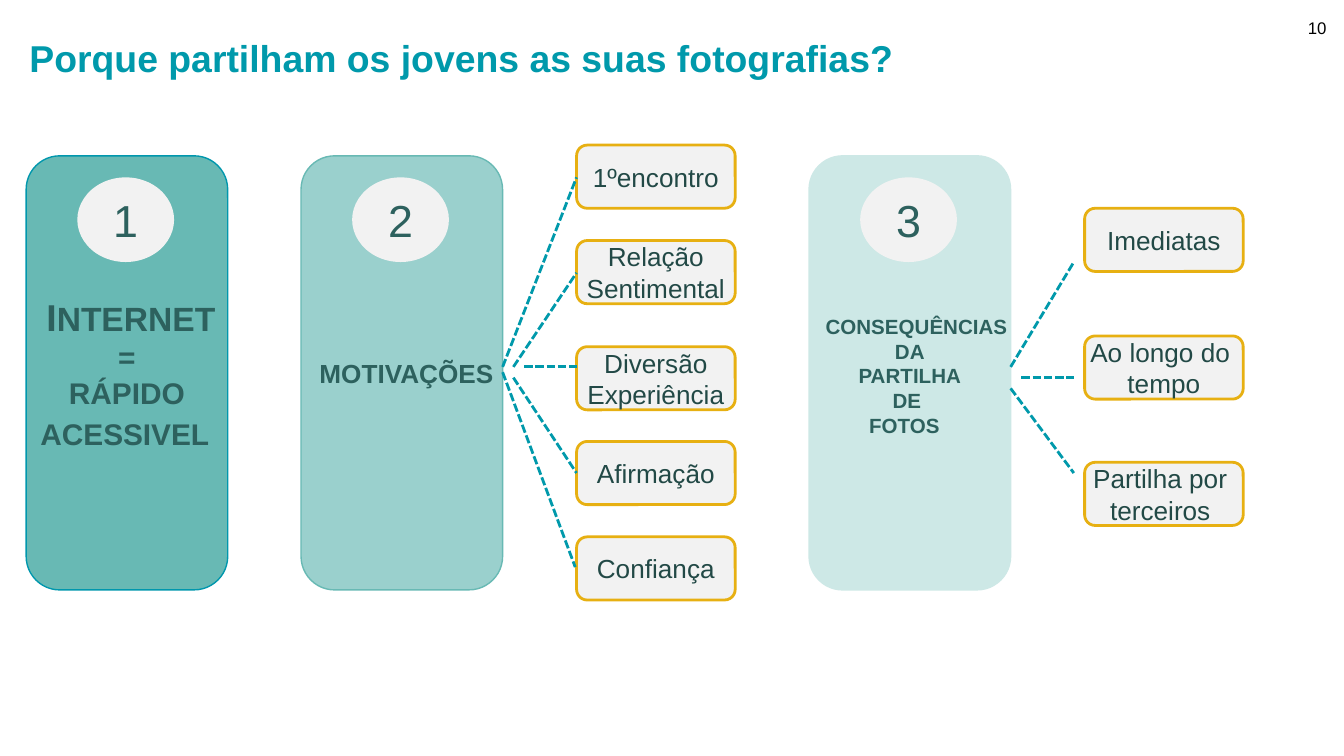
from pptx import Presentation
from pptx.dml.color import RGBColor
from pptx.enum.dml import MSO_LINE
from pptx.enum.shapes import MSO_CONNECTOR, MSO_SHAPE
from pptx.enum.text import MSO_ANCHOR, PP_ALIGN
from pptx.oxml.ns import qn
from pptx.util import Inches, Pt
from lxml import etree

ROUNDED, OVAL = MSO_SHAPE.ROUNDED_RECTANGLE, MSO_SHAPE.OVAL
STRAIGHT, DASH = MSO_CONNECTOR.STRAIGHT, MSO_LINE.SQUARE_DOT
MIDDLE, CENTER, LEFT = MSO_ANCHOR.MIDDLE, PP_ALIGN.CENTER, PP_ALIGN.LEFT

COLORS = {
    "accent": "0099AB", "ink": "2D615E", "tag_ink": "224946", "black": "000000",
    "pale": "F2F2F2", "gold": "E7B012", "edge": "0097AD",
    "teal": "68B9B4", "mint": "9AD0CD", "ice": "CDE8E6",
}
CELL = Inches(0.1)  # square grid, 100 columns across the slide

prs = Presentation()
prs.slide_width = 100 * CELL
prs.slide_height = prs.slide_width * 9 // 16
slide = prs.slides.add_slide(prs.slide_layouts[6])


def rgb(name):
    return RGBColor.from_string(COLORS[name])


def add_block(kind, box, lines, ink, fill=None, edge=None, edge_width=0.75, bold=False):
    """Add a shape, or a text box if kind is None; each line is a list of (text, size)."""
    place = [round(cells * CELL) for cells in box]
    if kind is None:
        block = slide.shapes.add_textbox(*place)
    else:
        block = slide.shapes.add_shape(kind, *place)
        block.shadow.inherit = False
        block.fill.solid()
        block.fill.fore_color.rgb = rgb(fill)
        if edge:
            block.line.color.rgb = rgb(edge)
            block.line.width = Pt(edge_width)
        else:
            block.line.fill.background()
    frame = block.text_frame
    frame.word_wrap = kind is None
    frame.vertical_anchor = MIDDLE
    for number, line in enumerate(lines):
        paragraph = frame.paragraphs[0] if number == 0 else frame.add_paragraph()
        paragraph.alignment = CENTER
        for text, size in line:
            run = paragraph.add_run()
            run.text = text
            run.font.size, run.font.bold, run.font.name = Pt(size), bold, "Arial"
            run.font.color.rgb = rgb(ink)
    return frame


# Title and page number
title = add_block(None, (1.2, 2.1, 96.5, 4.4),
                  [[("Porque partilham os jovens as suas fotografias?", 20)]],
                  "accent", bold=True)
title.paragraphs[0].alignment = LEFT
add_block(None, (95.6, 0.6, 4.8, 3), [[("10", 9)]], "black")

# Numbered panels: left, fill, edge, first-line and last-line indents, lines
panels = [
    (1.95, "teal", "edge", 0.6, 0.3, [[("I", 20), ("NTERNET", 18)], [("=", 16)],
                                      [("RÁPIDO", 16)], [("ACESSIVEL", 16)]]),
    (22.4, "mint", "teal", 0.7, 0, [[("MOTIVAÇÕES", 14)]]),
    (60.2, "ice", "ice", 1, 0.8, [[(word, 11)] for word in
                                  ("CONSEQUÊNCIAS", "DA", "PARTILHA", "DE ", "FOTOS")]),
]
panel_frames = []
for number, (left, fill, edge, first, last, lines) in enumerate(panels, 1):
    panel = add_block(ROUNDED, (left, 11.6, 15, 32.3), lines, "ink", fill, edge, bold=True)
    for paragraph, side, indent in ((panel.paragraphs[0], "marL", first),
                                    (panel.paragraphs[-1], "marR", last)):
        paragraph._p.get_or_add_pPr().set(side, str(round(indent * CELL)))
    panel_frames.append(panel)
    add_block(OVAL, (left + 3.8, 13.2, 7.2, 6.3), [[(str(number), 24)]], "ink", "pale")
panel_frames[0].paragraphs[-1].space_before = Pt(3)
panel_frames[2].margin_top = Inches(0.09)

# Tags beside panels 2 and 3: left, then top and lines of each
tag_columns = [
    (42.9, [(10.8, ["1ºencontro"]), (17.9, ["Relação", "Sentimental"]),
            (25.8, ["Diversão", "Experiência"]), (32.85, ["Afirmação"]),
            (39.95, ["Confiança"])]),
    (80.7, [(15.5, ["Imediatas"]), (25, ["Ao longo do ", "tempo"]),
            (34.4, ["Partilha por ", "terceiros "])]),
]
for left, tags in tag_columns:
    for top, words in tags:
        add_block(ROUNDED, (left, top, 11.8, 4.7), [[(word, 14)] for word in words],
                  "tag_ink", "pale", "gold", 1.5)

# Dashed links from panels to tags: start x, start y, end x, end y
links = [
    (37.4, 27.3, 42.9, 13.2), (38.2, 27.3, 42.9, 20.3), (39, 27.3, 42.9, 27.3),
    (38.2, 28.1, 42.9, 35.2), (37.4, 27.7, 42.8, 42.2),
    (75.2, 27.3, 79.9, 19.5), (76, 28.1, 79.9, 28.1), (75.2, 28.9, 79.9, 35.2),
]
for ends in links:
    link = slide.shapes.add_connector(STRAIGHT, *[round(cells * CELL) for cells in ends])
    link.line.color.rgb = rgb("accent")
    link.line.width = Pt(1.5)
    link.line.dash_style = DASH
    etree.SubElement(link._element.spPr, qn("a:effectLst"))

prs.save("out.pptx")
